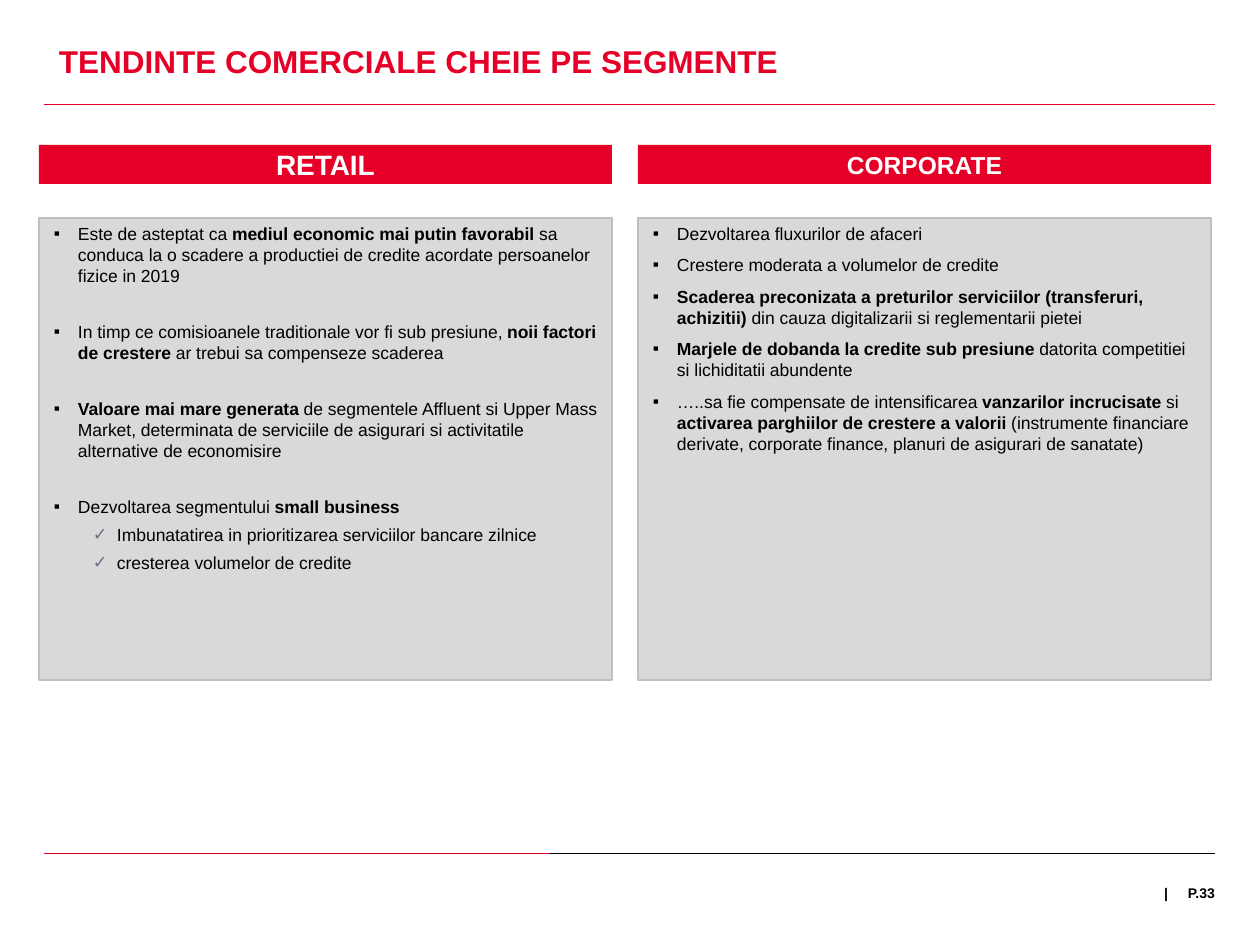
from lxml import etree
from pptx import Presentation
from pptx.dml.color import RGBColor
from pptx.enum.shapes import MSO_CONNECTOR, MSO_SHAPE
from pptx.enum.text import MSO_ANCHOR, PP_ALIGN
from pptx.oxml.ns import qn
from pptx.util import Pt

PX = 914400 // 126
LINE, RECT = MSO_CONNECTOR.STRAIGHT, MSO_SHAPE.RECTANGLE
LEFT, MID, RIGHT = PP_ALIGN.LEFT, PP_ALIGN.CENTER, PP_ALIGN.RIGHT
TOP, CENTER = MSO_ANCHOR.TOP, MSO_ANCHOR.MIDDLE
FONT = "Arial"
COLOR = {"red": "E60028", "gray": "D9D9D9", "edge": "BFBFBF",
         "black": "000000", "white": "FFFFFF", "tick": "6E6E87"}

MARKS = {"main": ("▪", "black", 24), "sub": ("✓", "tick", 63)}
HANG = 24

TITLE = "TENDINTE COMERCIALE CHEIE PE SEGMENTE"
PAGE = "P.33"
COLUMNS = [
    {"head": "RETAIL", "size": 16, "items": [
        ("main", 0, [("Este de asteptat ca ", False),
                     ("mediul economic mai putin favorabil ", True),
                     ("sa conduca la o scadere a productiei de credite "
                      "acordate persoanelor fizice in 2019", False)]),
        ("main", 20, [("In timp ce comisioanele traditionale vor fi sub presiune, ", False),
                      ("noii factori de crestere ", True),
                      ("ar trebui sa compenseze scaderea", False)]),
        ("main", 20, [("Valoare mai mare generata ", True),
                      ("de segmentele Affluent si Upper Mass Market, determinata de "
                       "serviciile de asigurari si activitatile alternative de "
                       "economisire", False)]),
        ("main", 20, [("Dezvoltarea segmentului ", False), ("small business", True)]),
        ("sub", 4, [("Imbunatatirea in prioritizarea serviciilor bancare zilnice", False)]),
        ("sub", 4, [("cresterea volumelor de credite", False)]),
    ]},
    {"head": "CORPORATE", "size": 14, "items": [
        ("main", 0, [("Dezvoltarea fluxurilor de afaceri", False)]),
        ("main", 6, [("Crestere moderata a volumelor de credite", False)]),
        ("main", 6, [("Scaderea preconizata a preturilor serviciilor "
                      "(transferuri, achizitii) ", True),
                     ("din cauza digitalizarii si reglementarii pietei", False)]),
        ("main", 6, [("Marjele de dobanda la credite sub presiune ", True),
                     ("datorita competitiei si lichiditatii abundente", False)]),
        ("main", 6, [("…..sa fie compensate de intensificarea ", False),
                     ("vanzarilor incrucisate ", True),
                     ("si ", False),
                     ("activarea parghiilor de crestere a valorii ", True),
                     ("(instrumente financiare derivate, corporate finance, "
                      "planuri de asigurari de sanatate)", False)]),
    ]},
]
RULES = [(44, 1215, 104, "red"), (44, 1215, 853, "red"), (550, 1215, 853, "black")]
COL_X, COL_W, STEP = 39, 573, 599
HEAD_Y, HEAD_H, BODY_Y, BODY_H = 145, 39, 218, 462


def rgb(name):
    return RGBColor.from_string(COLOR[name])


def add_run(para, text, size, color, bold):
    run = para.add_run()
    run.text = text
    font = run.font
    font.name, font.size, font.bold = FONT, Pt(size), bold
    font.color.rgb = rgb(color)


def set_frame(frame, side, edge, anchor, wrap=True):
    frame.margin_left = frame.margin_right = side * PX
    frame.margin_top = frame.margin_bottom = edge * PX
    frame.vertical_anchor = anchor
    frame.word_wrap = wrap


def add_label(slide, box, text, size, color, align, side=0, wrap=True):
    frame = slide.shapes.add_textbox(*(n * PX for n in box)).text_frame
    set_frame(frame, side, 0, TOP, wrap)
    para = frame.paragraphs[0]
    para.alignment = align
    add_run(para, text, size, color, True)


def add_box(slide, box, fill, edge=None):
    shape = slide.shapes.add_shape(RECT, *(n * PX for n in box))
    shape.shadow.inherit = False
    shape.fill.solid()
    shape.fill.fore_color.rgb = rgb(fill)
    if edge:
        shape.line.color.rgb = rgb(edge)
        shape.line.width = Pt(0.75)
    else:
        shape.line.fill.background()
    return shape.text_frame


def add_rule(slide, start, end, y, color):
    line = slide.shapes.add_connector(LINE, start * PX, y * PX, end * PX, y * PX)
    line.line.color.rgb = rgb(color)
    line.line.width = Pt(0.5)
    etree.SubElement(line._element.spPr, qn("a:effectLst"))


def set_mark(para, kind):
    char, color, indent = MARKS[kind]
    props = para._p.get_or_add_pPr()
    props.set("marL", str(indent * PX))
    props.set("indent", str(-HANG * PX))
    tint = etree.SubElement(props, qn("a:buClr"))
    etree.SubElement(tint, qn("a:srgbClr"), val=COLOR[color])
    etree.SubElement(props, qn("a:buFont"), typeface=FONT)
    etree.SubElement(props, qn("a:buChar"), char=char)


def add_column(slide, x, column):
    head = add_box(slide, (x, HEAD_Y, COL_W, HEAD_H), "red")
    set_frame(head, 25, 0, CENTER)
    head.paragraphs[0].alignment = MID
    add_run(head.paragraphs[0], column["head"], column["size"], "white", True)

    body = add_box(slide, (x, BODY_Y, COL_W, BODY_H), "gray", "edge")
    set_frame(body, 15, 5, TOP)
    for i, (kind, gap, runs) in enumerate(column["items"]):
        para = body.add_paragraph() if i else body.paragraphs[0]
        set_mark(para, kind)
        para.alignment = LEFT
        para.line_spacing = Pt(12)
        if gap:
            para.space_before = Pt(gap)
        for text, bold in runs:
            add_run(para, text, 10, "black", bold)


def main():
    deck = Presentation()
    deck.slide_width, deck.slide_height = 1260 * PX, 945 * PX
    slide = deck.slides.add_slide(deck.slide_layouts[6])
    for rule in RULES:
        add_rule(slide, *rule)
    add_label(slide, (54, 42, 1162, 38), TITLE, 18, "red", LEFT, 5)
    for i, column in enumerate(COLUMNS):
        add_column(slide, COL_X + i * STEP, column)
    add_label(slide, (1161, 885, 10, 60), "|", 8, "black", MID, wrap=False)
    add_label(slide, (1166, 885, 49, 60), PAGE, 8, "black", RIGHT)
    deck.save("out.pptx")


if __name__ == "__main__":
    main()
